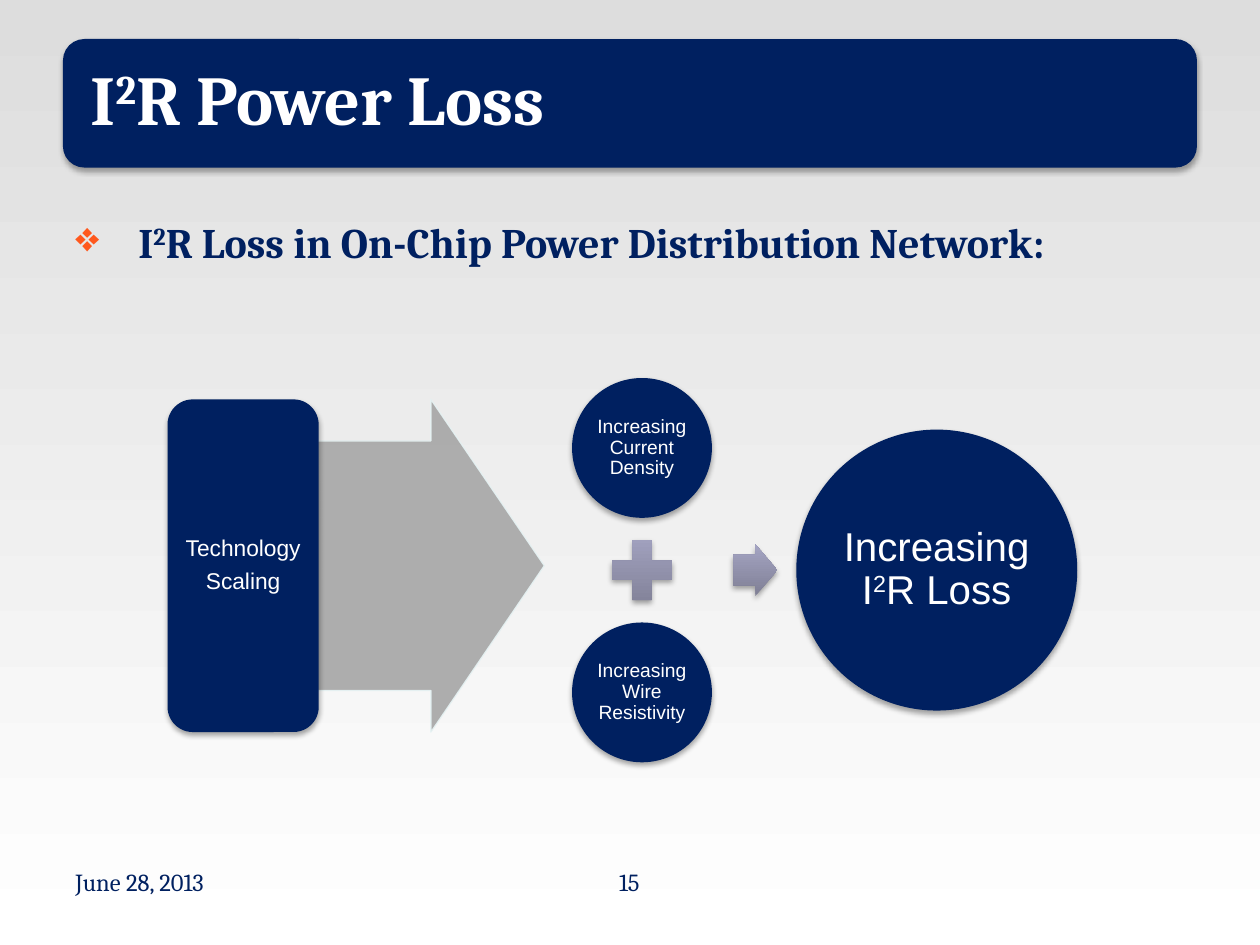
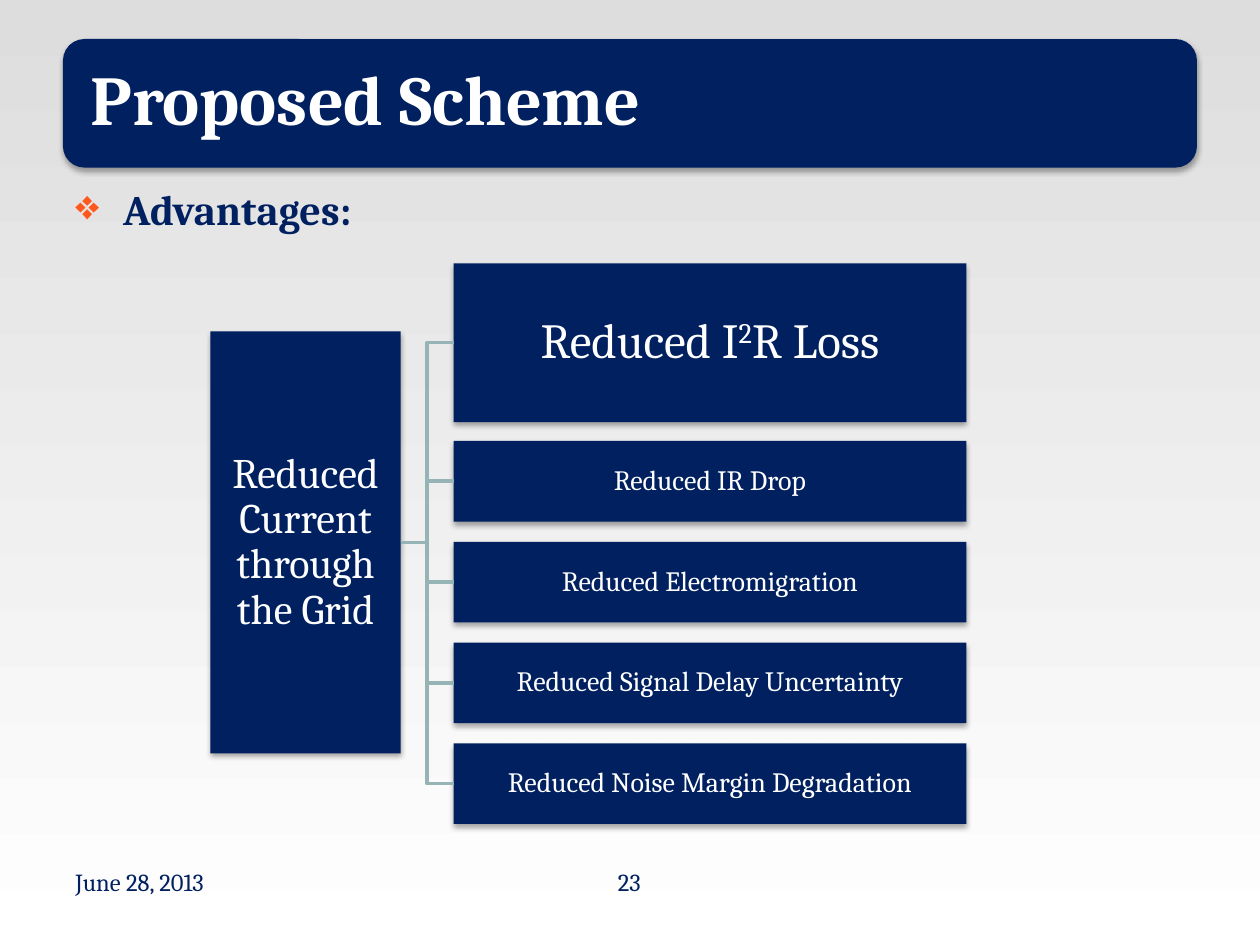
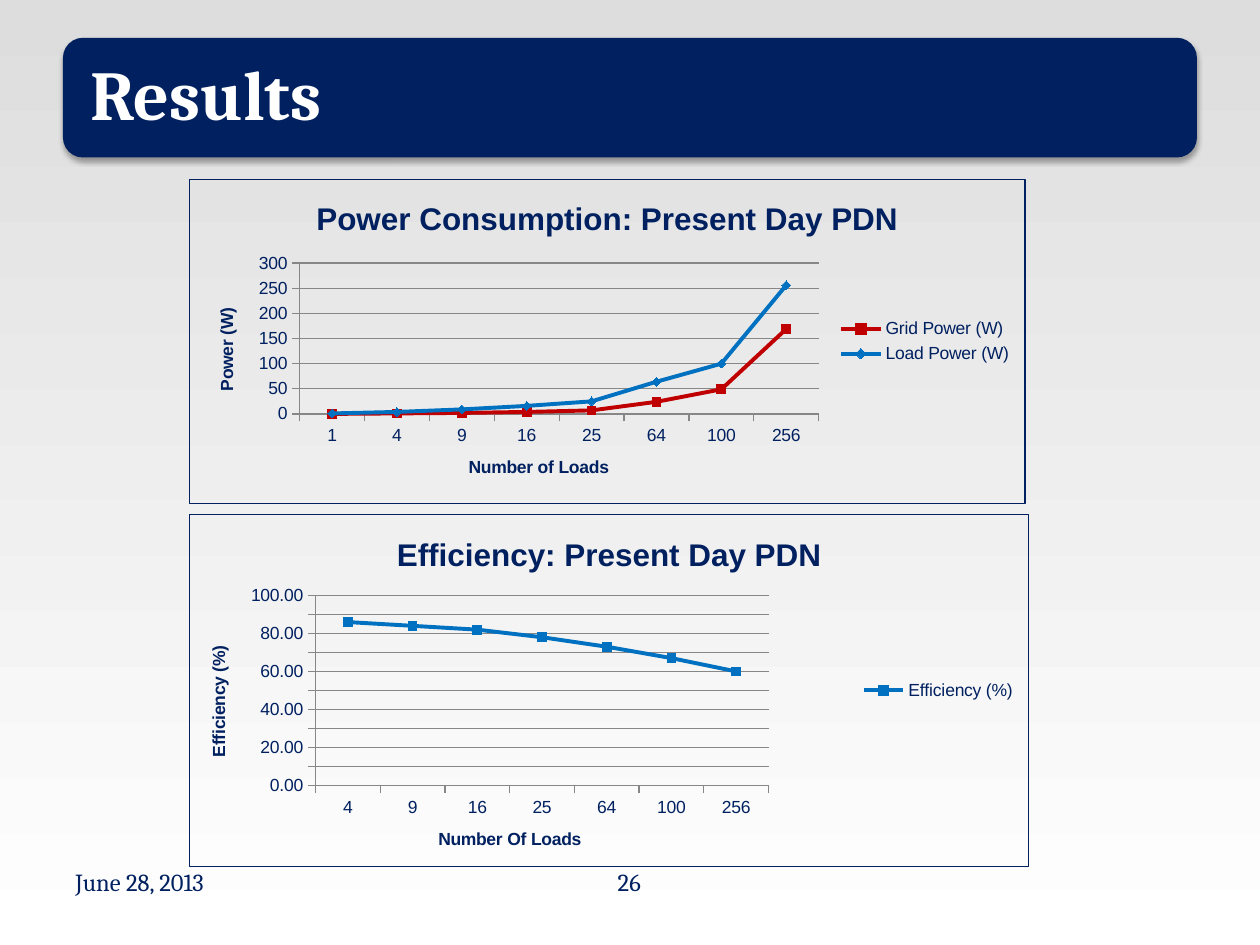
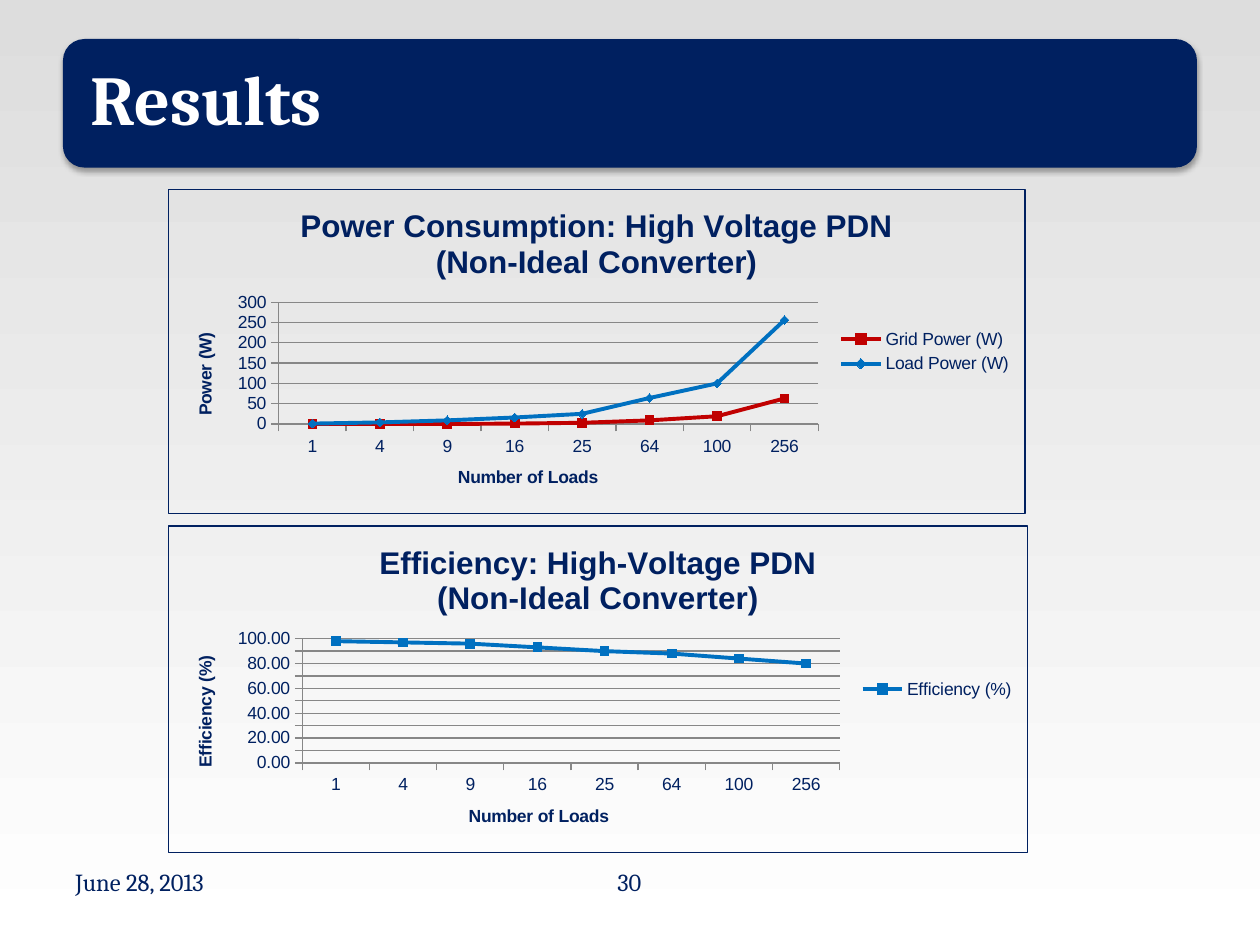
from lxml.etree import SubElement as Sub
from pptx import Presentation
from pptx.chart.data import CategoryChartData as ChartData
from pptx.dml.color import RGBColor as RGB
from pptx.enum.chart import XL_CHART_TYPE as CHART, XL_LEGEND_POSITION as LEGEND
from pptx.enum.chart import XL_MARKER_STYLE as MARK, XL_TICK_MARK as TICK
from pptx.enum.shapes import MSO_CONNECTOR as LINK, MSO_SHAPE as SHAPE
from pptx.enum.text import MSO_ANCHOR as ANCHOR, PP_ALIGN as ALIGN
from pptx.oxml import parse_xml
from pptx.oxml.ns import nsdecls, qn
from pptx.util import Inches, Pt

COLORS = {
    "navy": "002060", "white": "FFFFFF", "mist": "DDDDDD", "orange": "FF581D",
    "gray": "A6A6A6", "pale": "E7F3F4", "teal": "96B3B6", "grid": "878787",
    "dusk": "7F7F95", "lilac": "A5A5C3", "red": "C00000", "blue": "0070C0",
}
SERIF, SANS = "Cambria", "Arial"
DATE = "June 28, 2013"
BAR = (0.5, 0.31, 9, 1.02)
LOADS = ["1", "4", "9", "16", "25", "64", "100", "256"]
POWER = [1, 4, 9, 16, 25, 64, 100, 256]
STYLES = {
    "Grid Power (W)": ("red", MARK.SQUARE),
    "Load Power (W)": ("blue", MARK.DIAMOND),
    "Efficiency (%)": ("blue", MARK.SQUARE),
}


def rgb(name):
    return RGB.from_string(COLORS[name])


def place(at):
    return [Inches(n) for n in at]


def blend(fill, start, end, angle):
    fill.gradient()
    fill.gradient_angle = angle
    for stop, name in zip(fill.gradient_stops, (start, end)):
        stop.color.rgb = rgb(name)


def fade(node, percent):
    for color in node.iter(qn("a:srgbClr")):
        Sub(color, qn("a:alpha"), val=str(percent * 1000))


def style(font, size, color, face, bold=False):
    font.size, font.name, font.bold = Pt(size), face, bold
    font.color.rgb = rgb(color)


def write(frame, text, size, color="white", face=SERIF, bold=False,
          align=ALIGN.CENTER, inset=None, anchor=ANCHOR.TOP, lead=None):
    frame.word_wrap = True
    frame.vertical_anchor = anchor
    if inset is not None:
        frame.margin_left = frame.margin_right = Inches(inset)
        frame.margin_top = frame.margin_bottom = Inches(inset)
    frame.text = text
    for para in frame.paragraphs:
        para.alignment, para.line_spacing = align, lead
        head, *tails = para.text.split("^")
        para.text = head
        for tail in tails:
            power, rest = para.add_run(), para.add_run()
            power.text, rest.text = tail[0], tail[1:]
            power.font._element.set("baseline", "30000")
        for run in para.runs:
            style(run.font, size, color, face, bold)
    for para in frame.paragraphs[:-1]:
        para.space_after = Pt(0.35 * size)


def label(slide, at, text, size, align=ALIGN.LEFT, bold=False):
    box = slide.shapes.add_textbox(*place(at))
    write(box.text_frame, text, size, "navy", bold=bold, align=align)
    return box.text_frame.paragraphs[0]


def bullet(slide, at, text, indent, align=ALIGN.LEFT):
    para = label(slide, at, text, 24, align, True)
    props = para._p.get_or_add_pPr()
    props.set("marL", str(Inches(indent)))
    props.set("indent", str(-Inches(indent)))
    tint = Sub(props, qn("a:buClr"))
    Sub(tint, qn("a:srgbClr"), val=COLORS["orange"])
    Sub(props, qn("a:buChar"), char="❖")


def shade(shape):
    shape.shadow.inherit = False
    effects = shape._element.spPr.find(qn("a:effectLst"))
    cast = Sub(effects, qn("a:outerShdw"), blurRad=str(Pt(3.1)),
               dist=str(Pt(1.8)), dir="5400000", rotWithShape="0")
    Sub(cast, qn("a:srgbClr"), val="000000")
    fade(cast, 35)


def block(slide, kind, at, text, size, **look):
    shape = slide.shapes.add_shape(kind, *place(at))
    shape.fill.solid()
    shape.fill.fore_color.rgb = rgb("navy")
    shape.line.fill.background()
    shade(shape)
    look = {"inset": 0.02, **look}
    write(shape.text_frame, text, size, anchor=ANCHOR.MIDDLE, lead=0.9, **look)
    return shape


def sign(slide, kind, at):
    shape = slide.shapes.add_shape(kind, *place(at))
    blend(shape.fill, "dusk", "lilac", 90)
    shape.line.fill.background()
    shade(shape)
    return shape


def arrow(slide, at):
    shape = slide.shapes.add_shape(SHAPE.RIGHT_ARROW, *place(at))
    shape.adjustments[0] = 0.75
    shape.fill.solid()
    shape.fill.fore_color.rgb = rgb("gray")
    shape.line.color.rgb = rgb("pale")
    shape.line.width = Pt(0.75)
    shape.shadow.inherit = False
    fade(shape._element.spPr, 90)


def branch(slide, root, leaf):
    link = slide.shapes.add_connector(LINK.ELBOW, 0, 0, 0, 0)
    link.begin_connect(root, 3)
    link.end_connect(leaf, 1)
    link.line.color.rgb = rgb("teal")
    link.line.width = Pt(2)
    Sub(link._element.spPr, qn("a:effectLst"))


def start(deck, title, number, bar=BAR):
    slide = deck.slides.add_slide(deck.slide_layouts[6])
    block(slide, SHAPE.ROUNDED_RECTANGLE, bar, title, 40, bold=True,
          align=ALIGN.LEFT, inset=0.17)
    label(slide, (0.5, 6.83, 2.33, 0.52), DATE, 14)
    label(slide, (3.83, 6.83, 2.33, 0.52), str(number), 14, ALIGN.CENTER)
    return slide


def frame(chart):
    space = chart.element
    area = space.find(".//" + qn("c:plotArea"))
    area.append(parse_xml(f'<c:spPr {nsdecls("c", "a")}><a:noFill/></c:spPr>'))
    edge = parse_xml(
        f'<c:spPr {nsdecls("c", "a")}><a:noFill/><a:ln w="{Pt(0.75)}"><a:solidFill>'
        f'<a:srgbClr val="{COLORS["navy"]}"/></a:solidFill></a:ln></c:spPr>')
    space.find(qn("c:txPr")).addprevious(edge)


def inner(chart, spot):
    area = chart.element.find(".//" + qn("c:plotArea"))
    for old in area.findall(qn("c:layout")):
        area.remove(old)
    layout = parse_xml(f'<c:layout {nsdecls("c")}/>')
    area.insert(0, layout)
    manual = Sub(layout, qn("c:manualLayout"))
    Sub(manual, qn("c:layoutTarget"), val="inner")
    for key in "xy":
        Sub(manual, qn(f"c:{key}Mode"), val="edge")
    for key, part in zip("xywh", spot):
        Sub(manual, qn(f"c:{key}"), val=str(part))


def title(owner, text, size):
    owner.text_frame.text = text
    for para in owner.text_frame.paragraphs:
        for run in para.runs:
            style(run.font, size, "navy", SANS, True)


def axis(item, name):
    title(item.axis_title, name, 10)
    item.major_tick_mark, item.minor_tick_mark = TICK.OUTSIDE, TICK.NONE
    item.format.line.color.rgb = rgb("grid")


def plot(slide, at, name, across, up, cats, rows, step=None, top=None, spot=None):
    data = ChartData()
    data.categories = cats
    for key, values in rows.items():
        data.add_series(key, values)
    chart = slide.shapes.add_chart(CHART.LINE_MARKERS, *place(at), data).chart
    style(chart.font, 10, "navy", SANS)
    chart.has_title = True
    title(chart.chart_title, name, 18)
    chart.has_legend = True
    chart.legend.position = LEGEND.RIGHT
    chart.legend.include_in_layout = False
    axis(chart.category_axis, across)
    scale = chart.value_axis
    axis(scale, up)
    scale.has_major_gridlines = True
    scale.major_gridlines.format.line.color.rgb = rgb("grid")
    if step:
        scale.major_unit = step
        scale.tick_labels.number_format = "0.00"
        scale.tick_labels.number_format_is_linked = False
    if top:
        scale.minimum_scale, scale.maximum_scale = 0, top
    chart.plots[0].vary_by_categories = False
    for line in chart.plots[0].series:
        color, mark = STYLES[line.name]
        line.smooth = False
        line.format.line.color.rgb = rgb(color)
        line.format.line.width = Pt(2.25)
        line.marker.style, line.marker.size = mark, 5
        line.marker.format.fill.solid()
        line.marker.format.fill.fore_color.rgb = rgb(color)
        line.marker.format.line.color.rgb = rgb(color)
    frame(chart)
    if spot:
        inner(chart, spot)


def power(slide, at, name, grid):
    rows = {"Grid Power (W)": grid, "Load Power (W)": POWER}
    plot(slide, at, name, "Number of Loads", "Power (W)", LOADS, rows)


def yields(slide, at, name, across, cats, values, **more):
    rows = {"Efficiency (%)": values}
    plot(slide, at, name, across, "Efficiency (%)", cats, rows, step=10, **more)


def loss(deck):
    slide = start(deck, "I^2R Power Loss", 15)
    bullet(slide, (0.5, 1.67, 8.75, 0.5),
           "I^2R Loss in On-Chip Power Distribution Network:", 0.5, ALIGN.JUSTIFY)
    causes = ("Increasing Current Density", "Increasing Wire Resistivity")
    for row, text in enumerate(causes):
        block(slide, SHAPE.OVAL, (4.54, 3 + 1.94 * row, 1.11, 1.11), text, 11, face=SANS)
    sign(slide, SHAPE.MATH_PLUS, (4.77, 4.2, 0.65, 0.65))
    sign(slide, SHAPE.RIGHT_ARROW, (5.82, 4.32, 0.35, 0.41)).adjustments[0] = 0.6
    block(slide, SHAPE.OVAL, (6.32, 3.41, 2.23, 2.23), "Increasing I^2R Loss", 23,
          face=SANS, inset=0.03)
    arrow(slide, (2.52, 3.17, 1.8, 2.64))
    block(slide, SHAPE.ROUNDED_RECTANGLE, (1.33, 3.17, 1.2, 2.64),
          "Technology\nScaling", 13, face=SANS, inset=0.04)


def scheme(deck):
    slide = start(deck, "Proposed Scheme", 23)
    bullet(slide, (0.5, 1.41, 8.83, 0.91), "Advantages:", 0.38)
    root = block(slide, SHAPE.RECTANGLE, (1.67, 2.63, 1.51, 3.35),
                 "Reduced Current through the Grid", 24)
    gains = ("IR Drop", "Electromigration", "Signal Delay Uncertainty",
             "Noise Margin Degradation")
    leaves = [block(slide, SHAPE.RECTANGLE, (3.6, 2.09, 4.07, 1.26),
                    "Reduced I^2R Loss", 28)]
    for row, gain in enumerate(gains):
        at = (3.6, 3.5 + 0.8 * row, 4.07, 0.64)
        leaves.append(block(slide, SHAPE.RECTANGLE, at, f"Reduced {gain}", 16))
    for leaf in leaves:
        branch(slide, root, leaf)


def present(deck):
    slide = start(deck, "Results", 26, (0.5, 0.3, 9, 0.95))
    power(slide, (1.5, 1.42, 6.64, 2.58), "Power Consumption: Present Day PDN",
          [0, 1, 2, 4, 7, 24, 49, 169])
    yields(slide, (1.5, 4.08, 6.67, 2.8), "Efficiency: Present Day PDN",
           "Number Of Loads", LOADS[1:], [86, 84, 82, 78, 73, 67, 60],
           spot=(0.15, 0.23, 0.54, 0.54))


def future(deck):
    slide = start(deck, "Results", 30)
    power(slide, (1.33, 1.5, 6.81, 2.58),
          "Power Consumption: High Voltage PDN\n(Non-Ideal Converter)",
          [0, 0, 0, 1, 3, 9, 19, 63])
    yields(slide, (1.33, 4.17, 6.83, 2.6),
           "Efficiency: High-Voltage PDN\n(Non-Ideal Converter)",
           "Number of Loads", LOADS, [98, 97, 96, 93, 90, 88, 84, 80], top=100)


def main():
    deck = Presentation()
    deck.slide_width, deck.slide_height = Inches(10), Inches(7.5)
    blend(deck.slide_master.background.fill, "mist", "white", 270)
    for build in (loss, scheme, present, future):
        build(deck)
    deck.save("out.pptx")


if __name__ == "__main__":
    main()
